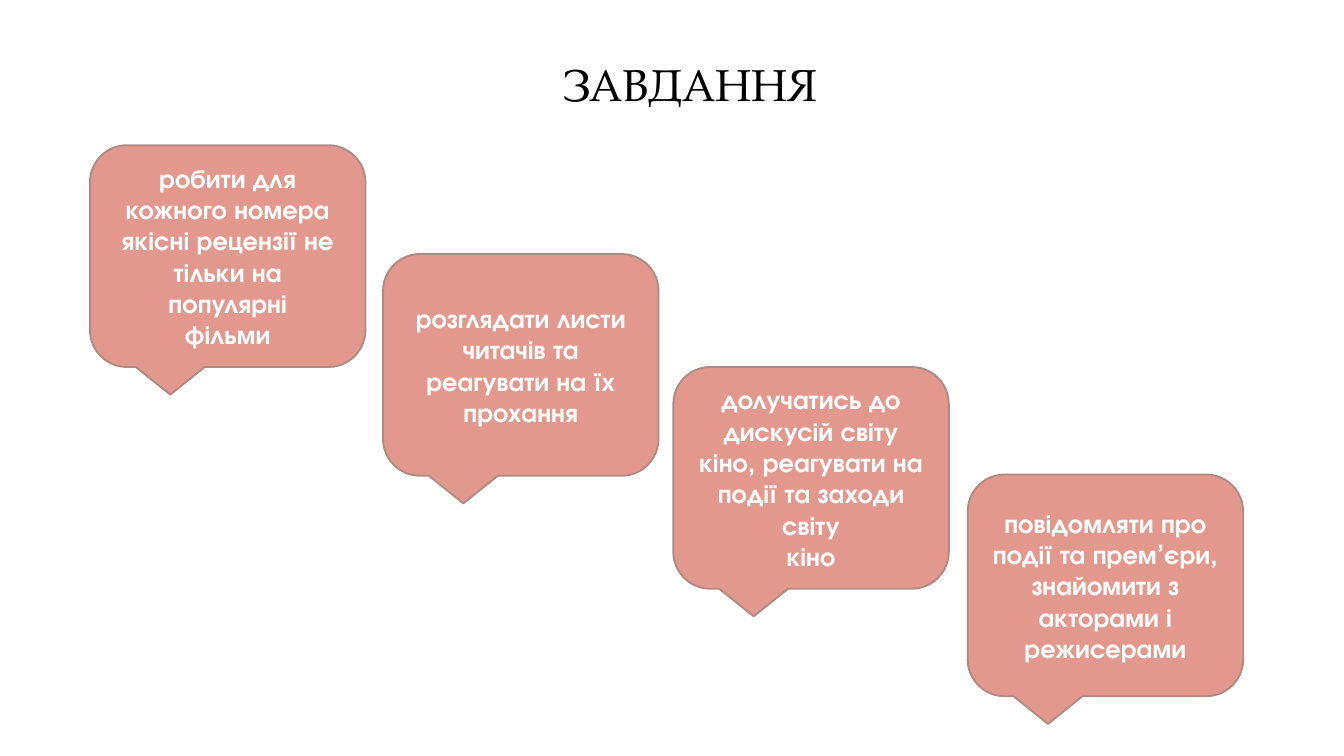
from pptx import Presentation
from pptx.dml.color import RGBColor
from pptx.enum.shapes import MSO_SHAPE
from pptx.enum.text import MSO_ANCHOR, PP_ALIGN
from pptx.util import Pt

CALLOUT = MSO_SHAPE.ROUNDED_RECTANGULAR_CALLOUT
MIDDLE = MSO_ANCHOR.MIDDLE
CENTER = PP_ALIGN.CENTER

BLACK = RGBColor(0x00, 0x00, 0x00)
WHITE = RGBColor(0xFF, 0xFF, 0xFF)
CORAL = RGBColor(0xE2, 0x98, 0x8C)
TAUPE = RGBColor(0xAE, 0x8A, 0x84)
TITLE_FONT = "TeX Gyre Pagella"
TASK_FONT = "TeX Gyre Adventor"

TITLE = "ЗАВДАННЯ"
# Left, top and paragraphs of each task
TASKS = [
    (48.2, 77.8, ["робити для кожного номера якісні рецензії не тільки на популярні",
                  "фільми"]),
    (205.2, 136.1, ["розглядати листи читачів та реагувати на їх прохання"]),
    (360.7, 196.6, ["долучатись до дискусій світу кіно, реагувати на події та заходи світу",
                    "кіно"]),
    (518.4, 254.2, ["повідомляти про події та прем’єри, знайомити з",
                    "акторами і режисерами"]),
]
TASK_WIDTH, TASK_HEIGHT = 147.6, 118.8


def write(shape, paragraphs, *, font, size, color, bold=False, anchor=None):
    frame = shape.text_frame
    frame.word_wrap = True
    if anchor is not None:
        frame.vertical_anchor = anchor
    for i, text in enumerate(paragraphs):
        paragraph = frame.add_paragraph() if i else frame.paragraphs[0]
        paragraph.alignment = CENTER
        run = paragraph.add_run()
        run.text = text
        run.font.name = font
        run.font.size = Pt(size)
        run.font.bold = bold
        run.font.color.rgb = color


prs = Presentation()
prs.slide_width, prs.slide_height = Pt(720), Pt(405)
slide = prs.slides.add_slide(prs.slide_layouts[6])

title = slide.shapes.add_textbox(Pt(266.4), Pt(26.6), Pt(206.6), Pt(38.9))
write(title, [TITLE], font=TITLE_FONT, size=24, color=BLACK)

for left, top, paragraphs in TASKS:
    task = slide.shapes.add_shape(CALLOUT, Pt(left), Pt(top), Pt(TASK_WIDTH), Pt(TASK_HEIGHT))
    task.shadow.inherit = False
    task.fill.solid()
    task.fill.fore_color.rgb = CORAL
    task.line.color.rgb = TAUPE
    task.line.width = Pt(1)
    write(task, paragraphs, font=TASK_FONT, size=14, color=WHITE, bold=True, anchor=MIDDLE)

prs.save("out.pptx")
